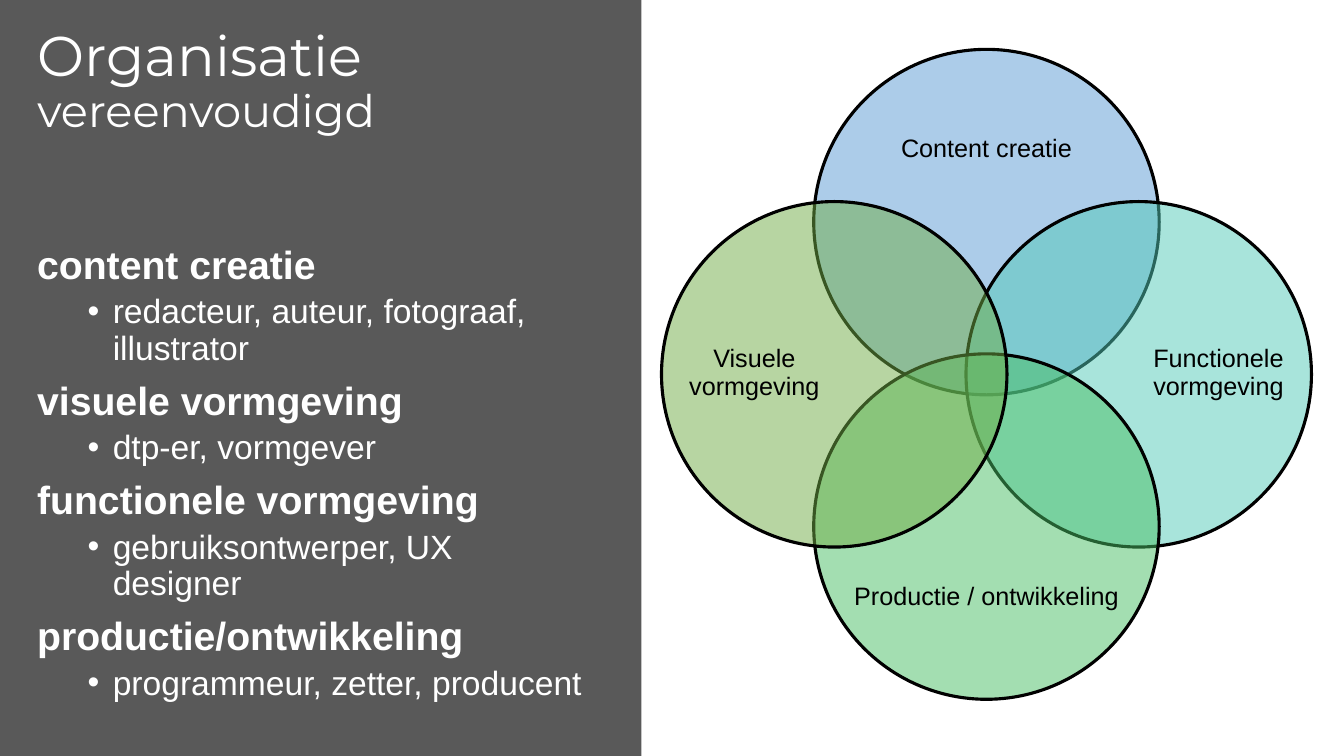
"""Builds a slide with a role list beside a four-circle Venn diagram."""
from lxml import etree
from pptx import Presentation
from pptx.dml.color import RGBColor
from pptx.enum.shapes import MSO_SHAPE
from pptx.enum.text import MSO_ANCHOR, MSO_AUTO_SIZE, PP_ALIGN
from pptx.oxml.ns import qn
from pptx.util import Emu, Pt

RECTANGLE, OVAL = MSO_SHAPE.RECTANGLE, MSO_SHAPE.OVAL
TOP, MIDDLE = MSO_ANCHOR.TOP, MSO_ANCHOR.MIDDLE
LEFT, CENTER = PP_ALIGN.LEFT, PP_ALIGN.CENTER
NO_AUTOFIT = MSO_AUTO_SIZE.NONE
TITLE_ONLY = 5

WHITE = RGBColor(0xFF, 0xFF, 0xFF)
BLACK = RGBColor(0x00, 0x00, 0x00)
GREY = RGBColor(0x59, 0x59, 0x59)
BLUE = RGBColor(0x5B, 0x9B, 0xD5)
TEAL = RGBColor(0x52, 0xCA, 0xB8)
GREEN = RGBColor(0x49, 0xBF, 0x64)
OLIVE = RGBColor(0x70, 0xAD, 0x47)

ROLES = [
    ("content creatie", "redacteur, auteur, fotograaf, illustrator"),
    ("visuele vormgeving", "dtp-er, vormgever"),
    ("functionele vormgeving", "gebruiksontwerper, UX designer"),
    ("productie/ontwikkeling", "programmeur, zetter, producent"),
]

VENN_X, VENN_Y = 939, 356
DIAMETER, SHIFT = 329, 145
CIRCLES = [
    ("Content creatie", BLUE, 0, -1, (813, 90, 253, 105)),
    ("Functionele vormgeving", TEAL, 1, 0, (1097, 229, 127, 253)),
    ("Productie / ontwikkeling", GREEN, 0, 1, (813, 516, 253, 105)),
    ("Visuele vormgeving", OLIVE, -1, 0, (655, 229, 127, 253)),
]


def px(length):
    return Emu(length * 9525)


class SlideBuilder:
    heading_font = "Montserrat"
    body_font = "Arial"
    line_spacing = 0.9

    def __init__(self, page):
        self.page = page

    def place(self, shape, left, top, width, height):
        shape.left, shape.top = px(left), px(top)
        shape.width, shape.height = px(width), px(height)

    def span(self, para, text, size, color, font=body_font, bold=False):
        span = para.add_run()
        span.text = text
        span.font.name = font
        span.font.size = Pt(size)
        span.font.color.rgb = color
        span.font.bold = bold

    def frame(self, box, anchor):
        frame = box.text_frame
        frame.word_wrap = True
        frame.auto_size = NO_AUTOFIT
        frame.vertical_anchor = anchor
        return frame

    def para(self, frame, first, align=LEFT):
        para = frame.paragraphs[0] if first else frame.add_paragraph()
        para.alignment = align
        para.line_spacing = self.line_spacing
        return para

    def panel(self, *area):
        panel = self.shape(RECTANGLE, GREY, *area)
        panel.line.fill.background()
        self.page.shapes._spTree.insert(2, panel._element)

    def shape(self, kind, color, *area):
        shape = self.page.shapes.add_shape(kind, *map(px, area))
        shape.shadow.inherit = False
        shape.fill.solid()
        shape.fill.fore_color.rgb = color
        return shape

    def title(self, first_line, second_line, *area):
        title = self.page.shapes.title
        self.place(title, *area)
        para = self.para(self.frame(title, TOP), True)
        self.span(para, first_line, 40, WHITE, self.heading_font)
        para.add_line_break()
        self.span(para, second_line, 32, WHITE, self.heading_font)

    def role_list(self, roles, *area):
        box = self.page.shapes.add_textbox(*map(px, area))
        frame = self.frame(box, TOP)
        for index, (role, people) in enumerate(roles):
            para = self.para(frame, index == 0)
            if index:
                para.space_before = Pt(10)
            self.span(para, role, 28, WHITE, bold=True)
            para = self.para(frame, False)
            para.space_before = Pt(5)
            self.bullet(para)
            self.span(para, people, 24, WHITE)

    def bullet(self, para):
        para.level = 1
        properties = para._p.get_or_add_pPr()
        properties.set("marL", str(px(72)))
        properties.set("indent", str(px(-24)))
        etree.SubElement(properties, qn("a:buFont")).set("typeface", self.body_font)
        etree.SubElement(properties, qn("a:buChar")).set("char", "•")

    def circle(self, color, center_x, center_y):
        left, top = center_x - DIAMETER // 2, center_y - DIAMETER // 2
        circle = self.shape(OVAL, color, left, top, DIAMETER, DIAMETER)
        circle.line.color.rgb = BLACK
        circle.line.width = Pt(2.25)
        fill_color = circle._element.spPr.find(qn("a:solidFill"))[0]
        etree.SubElement(fill_color, qn("a:alpha")).set("val", "50000")

    def label(self, text, *area):
        box = self.page.shapes.add_textbox(*map(px, area))
        frame = self.frame(box, MIDDLE)
        frame.margin_left = frame.margin_right = 0
        frame.margin_top = frame.margin_bottom = 0
        para = self.para(frame, True, CENTER)
        para.space_after = Pt(6.3)
        self.span(para, text, 18, BLACK)


def main():
    deck = Presentation()
    deck.slide_width, deck.slide_height = px(1280), px(720)
    builder = SlideBuilder(deck.slides.add_slide(deck.slide_layouts[TITLE_ONLY]))
    builder.panel(0, 0, 611, 720)
    builder.title("Organisatie", "vereenvoudigd", 26, 22, 546, 206)
    builder.role_list(ROLES, 26, 229, 546, 459)
    for text, color, across, down, label_area in CIRCLES:
        builder.circle(color, VENN_X + across * SHIFT, VENN_Y + down * SHIFT)
        builder.label(text, *label_area)
    deck.save("out.pptx")


if __name__ == "__main__":
    main()
